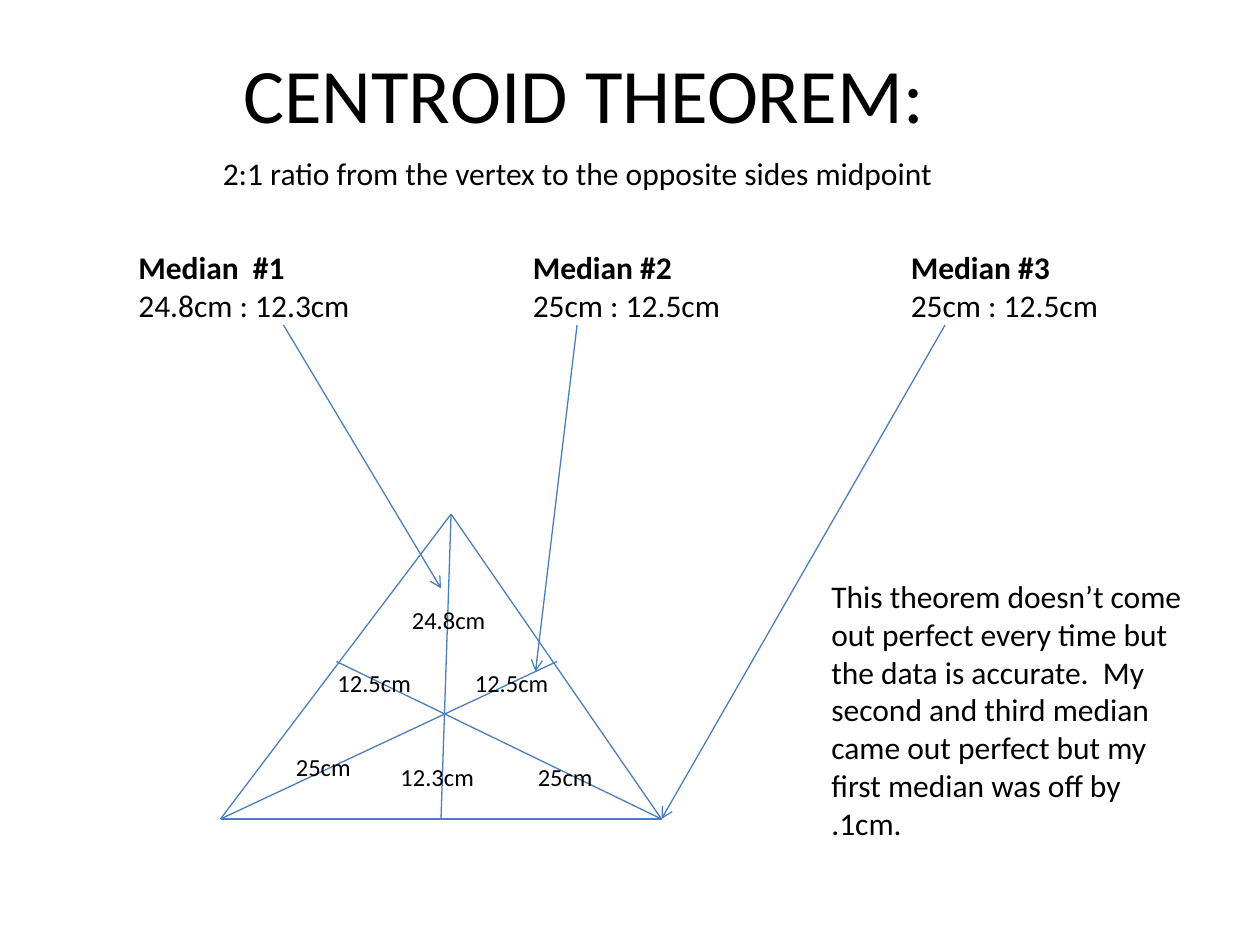
import lxml.etree
import pptx
import pptx.dml.color
import pptx.enum.shapes
import pptx.enum.text
import pptx.oxml.ns
import pptx.util

Inches = pptx.util.Inches
qn = pptx.oxml.ns.qn

COLORS = {"text": "000000", "line": "4B7EBC", "background": "FFFFFF"}


def rgb(name):
    return pptx.dml.color.RGBColor.from_string(COLORS[name])


class SlideBuilder:
    font_name = "Calibri"
    body_size = 18
    label_size = 14
    line_width = 0.75

    def __init__(self, presentation):
        self.slide = presentation.slides.add_slide(presentation.slide_layouts[5])
        fill = self.slide.background.fill
        fill.solid()
        fill.fore_color.rgb = rgb("background")

    def style(self, paragraph, size, bold=False):
        paragraph.alignment = pptx.enum.text.PP_ALIGN.LEFT
        paragraph.font.name = self.font_name
        paragraph.font.size = pptx.util.Pt(size)
        paragraph.font.bold = bold
        paragraph.font.color.rgb = rgb("text")

    def title(self, text, left, top, width, height):
        shape = self.slide.shapes.title
        shape.left, shape.top = Inches(left), Inches(top)
        shape.width, shape.height = Inches(width), Inches(height)
        frame = shape.text_frame
        frame.text = text
        frame.vertical_anchor = pptx.enum.text.MSO_ANCHOR.TOP
        frame.auto_size = pptx.enum.text.MSO_AUTO_SIZE.NONE
        self.style(frame.paragraphs[0], 44)

    def text(self, lines, left, top, width, height, size=body_size,
             wrap=False, heading=False):
        """Add a text box; with heading, its first line is bold."""
        box = self.slide.shapes.add_textbox(
            Inches(left), Inches(top), Inches(width), Inches(height))
        frame = box.text_frame
        frame.word_wrap = wrap
        frame.text = "\n".join(lines)
        for index, paragraph in enumerate(frame.paragraphs):
            self.style(paragraph, size, bold=heading and index == 0)

    def line(self, start, end, arrow=False):
        connector = self.slide.shapes.add_connector(
            pptx.enum.shapes.MSO_CONNECTOR.STRAIGHT,
            *(Inches(value) for value in (*start, *end)))
        connector.line.color.rgb = rgb("line")
        connector.line.width = pptx.util.Pt(self.line_width)
        properties = connector._element.spPr
        lxml.etree.SubElement(properties, qn("a:effectLst"))
        if arrow:
            outline = properties.find(qn("a:ln"))
            lxml.etree.SubElement(outline, qn("a:tailEnd"), type="arrow")


def main():
    presentation = pptx.Presentation()
    presentation.slide_width = Inches(10)
    presentation.slide_height = Inches(7.5)
    builder = SlideBuilder(presentation)

    builder.title("CENTROID THEOREM:", 1.83, 0.32, 6.08, 0.84)
    builder.text(["2:1 ratio from the vertex to the opposite sides midpoint"],
                 1.67, 1.17, 5.9, 0.4)

    medians = [
        ("Median  #1", "24.8cm : 12.3cm", 1, 1.9),
        ("Median #2", "25cm : 12.5cm", 4.13, 1.71),
        ("Median #3", "25cm : 12.5cm", 7.13, 1.71),
    ]
    for name, ratio, left, width in medians:
        builder.text([name, ratio], left, 1.92, width, 0.71, heading=True)

    left_vertex, right_vertex, apex = (1.75, 6.5), (5.25, 6.5), (3.58, 4.08)
    sides = [(left_vertex, right_vertex), (left_vertex, apex), (apex, right_vertex)]
    median_lines = [(apex, (3.5, 6.5)), (right_vertex, (2.67, 5.25)),
                    (left_vertex, (4.42, 5.25))]
    for start, end in sides + median_lines:
        builder.line(start, end)

    lengths = [
        ("12.3cm", 3.08, 6, 0.79),
        ("24.8cm", 3.17, 4.75, 0.79),
        ("25cm", 2.25, 5.92, 0.64),
        ("25cm", 4.17, 6, 0.64),
        ("12.5cm", 2.58, 5.25, 0.79),
        ("12.5cm", 3.67, 5.25, 0.79),
    ]
    for length, left, top, width in lengths:
        builder.text([length], left, top, width, 0.34, size=builder.label_size)

    pointers = [(2.25, (3.5, 4.67)), (4.58, (4.25, 5.33)), (7.5, right_vertex)]
    for start_x, target in pointers:
        builder.line((start_x, 2.58), target, arrow=True)

    builder.text(
        ["This theorem doesn’t come out perfect every time but the data is "
         "accurate.  My second and third median came out perfect but my first "
         "median was off by .1cm."],
        6.5, 4.53, 3, 2.22, wrap=True)

    presentation.save("out.pptx")


if __name__ == "__main__":
    main()
